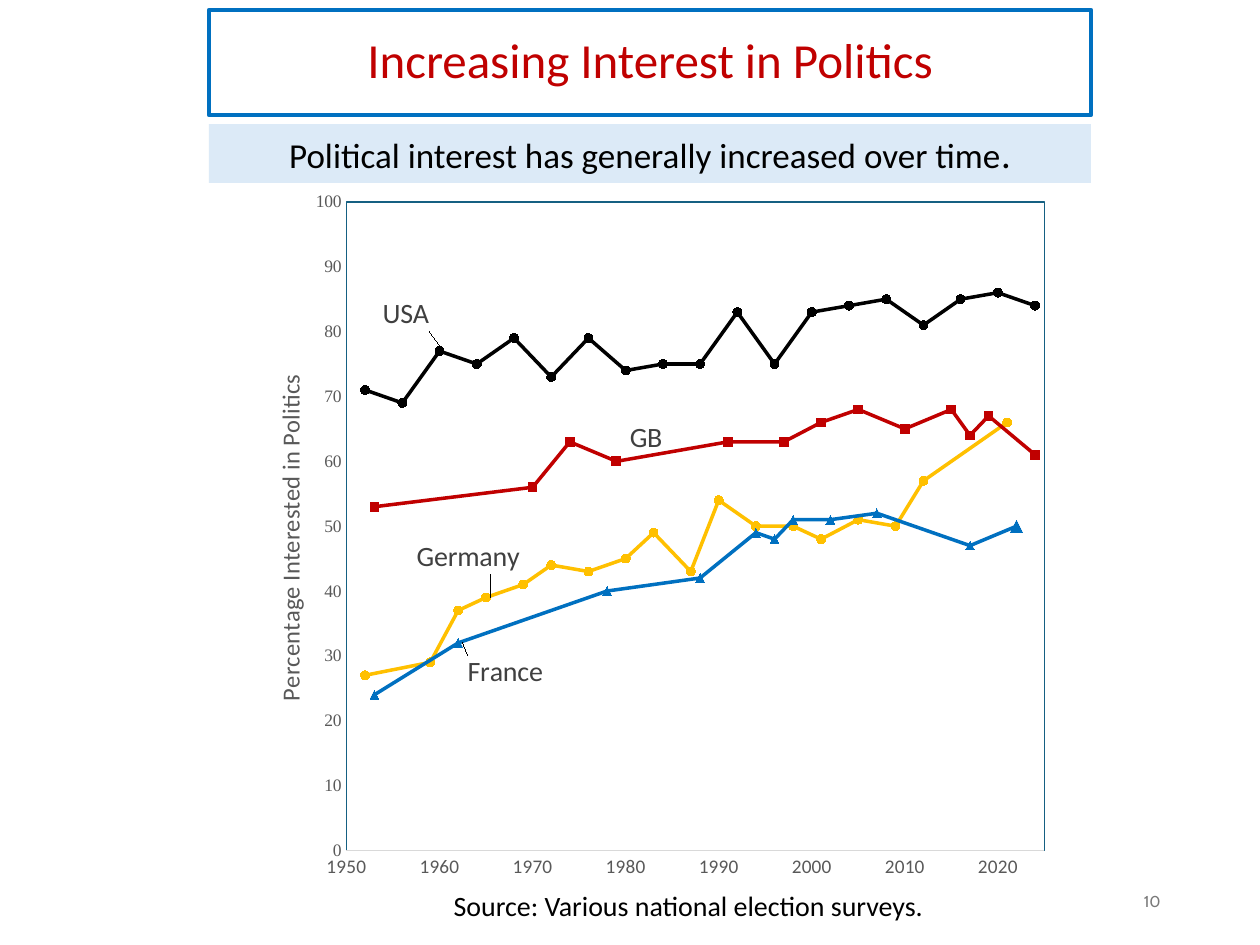
import pptx
import pptx.chart.data
import pptx.dml.color
import pptx.enum.chart
import pptx.enum.shapes
import pptx.enum.text
import pptx.oxml
import pptx.util

THEME = {
    "white": "FFFFFF", "black": "000000", "red": "C00000", "blue": "0070C0",
    "gold": "FFC000", "pale": "DCEAF7", "axis": "595959", "rule": "D9D9D9",
    "label": "404040", "frame": "156082", "number": "797979",
    "title": 28, "lead": 20, "stop": 22, "source": 16, "page": 9,
    "axis_title": 14, "years": 11, "percent": 10,
    "body": "Calibri", "serif": "Times New Roman", "sans": "Cabin",
}
for name, value in THEME.items():
    if name in ("white", "black", "red", "blue", "gold", "pale", "axis",
                "rule", "label", "frame", "number"):
        THEME[name] = pptx.dml.color.RGBColor.from_string(value)

PX = 914400 / 126
XL = pptx.enum.chart
ALIGN = pptx.enum.text.PP_ALIGN
NS = 'xmlns:c="http://schemas.openxmlformats.org/drawingml/2006/chart"'


def place(*lengths):
    return [pptx.util.Emu(round(n * PX)) for n in lengths]


def style(font, size, color, face="body"):
    font.size = pptx.util.Pt(THEME[size])
    font.color.rgb = THEME[color]
    font.name = THEME[face]
    font.bold = False


prs = pptx.Presentation()
prs.slide_width, prs.slide_height = place(1260, 945)
s = prs.slides.add_slide(prs.slide_layouts[5])
s.background.fill.solid()
s.background.fill.fore_color.rgb = THEME["white"]

title = s.shapes.title
title.left, title.top, title.width, title.height = place(209, 10, 882, 105)
title.line.color.rgb = THEME["blue"]
title.line.width = pptx.util.Pt(2.5)

lead = s.shapes.add_shape(pptx.enum.shapes.MSO_SHAPE.RECTANGLE, *place(209, 124, 882, 59))
lead.shadow.inherit = False
lead.fill.solid()
lead.fill.fore_color.rgb = THEME["pale"]
lead.line.fill.background()

data = pptx.chart.data.XyChartData()
SERIES = [
    ("USA", "black", "CIRCLE", 2, (-66, -37), range(1952, 2025, 4),
     [71, 69, 77, 75, 79, 73, 79, 74, 75, 75, 83, 75, 83, 84, 85, 81, 85, 86, 84]),
    ("GB", "red", "SQUARE", 3, (4, -23),
     [1953, 1970, 1974, 1979, 1991, 1997, 2001, 2005, 2010, 2015, 2017, 2019, 2024],
     [53, 56, 63, 60, 63, 63, 66, 68, 65, 68, 64, 67, 61]),
    ("France", "blue", "TRIANGLE", 1, (0, 29),
     [1953, 1962, 1978, 1988, 1994, 1996, 1998, 2002, 2007, 2017, 2022],
     [24, 32, 40, 42, 49, 48, 51, 51, 52, 47, 50]),
    ("Germany", "gold", "CIRCLE", 3, (-79, -40),
     [1952, 1959, 1962, 1965, 1969, 1972, 1976, 1980, 1983, 1987, 1990, 1994,
      1998, 2001, 2005, 2009, 2012, 2021],
     [27, 29, 37, 39, 41, 44, 43, 45, 49, 43, 54, 50, 50, 48, 51, 50, 57, 66]),
]
for country, color, marker, index, offset, years, shares in SERIES:
    points = data.add_series(country)
    for year, share in zip(years, shares):
        points.add_data_point(year, share)

CHART_W, CHART_H = 829, 712
chart = s.shapes.add_chart(XL.XL_CHART_TYPE.XY_SCATTER_LINES,
                           *place(252, 192, CHART_W, CHART_H), data).chart
chart.has_legend = False
chart.has_title = False
chart.plots[0].vary_by_categories = False
style(chart.font, "percent", "black", "sans")

for axis, low, high, size, face in [
    (chart.category_axis, 1950, 2025, "years", "body"),
    (chart.value_axis, 0, 100, "percent", "serif"),
]:
    axis.minimum_scale, axis.maximum_scale, axis.major_unit = low, high, 10
    axis.has_major_gridlines = False
    axis.major_tick_mark = axis.minor_tick_mark = XL.XL_TICK_MARK.NONE
    axis.tick_labels.number_format = "0"
    axis.tick_labels.number_format_is_linked = False
    style(axis.tick_labels.font, size, "axis", face)
chart.category_axis.format.line.color.rgb = THEME["rule"]
chart.category_axis.format.line.width = pptx.util.Pt(0.75)
chart.value_axis.format.line.fill.background()

axis_title = chart.value_axis.axis_title
r = axis_title.text_frame.paragraphs[0].add_run()
r.text = "Percentage Interested in Politics"
style(r.font, "axis_title", "axis")
axis_title.text_frame._txBody.bodyPr.set("rot", "-5400000")
axis_title.text_frame._txBody.bodyPr.set("vert", "horz")
for old in axis_title._element.xpath("c:layout"):
    axis_title._element.remove(old)
axis_title._element.xpath("c:tx")[0].addnext(pptx.oxml.parse_xml(
    f'<c:layout {NS}><c:manualLayout><c:xMode val="edge"/><c:yMode val="edge"/>'
    '<c:x val="0.02"/><c:y val="0.25"/></c:manualLayout></c:layout>'))

plot_area = chart._chartSpace.chart.plotArea
for old in plot_area.xpath("c:layout"):
    plot_area.remove(old)
plot_area.insert(0, pptx.oxml.parse_xml(
    f'<c:layout {NS}><c:manualLayout><c:layoutTarget val="inner"/>'
    '<c:xMode val="edge"/><c:yMode val="edge"/><c:x val="0.114"/><c:y val="0.014"/>'
    '<c:w val="0.842"/><c:h val="0.911"/></c:manualLayout></c:layout>'))
plot_area.append(pptx.oxml.parse_xml(
    f'<c:spPr {NS} xmlns:a="http://schemas.openxmlformats.org/drawingml/2006/main">'
    f'<a:noFill/><a:ln w="9525"><a:solidFill><a:srgbClr val="{THEME["frame"]}"/>'
    '</a:solidFill></a:ln></c:spPr>'))

for series, (country, color, marker, index, offset, years, shares) in zip(chart.plots[0].series, SERIES):
    series.smooth = False
    series.format.line.color.rgb = THEME[color]
    series.format.line.width = pptx.util.Pt(2)
    series.marker.style = XL.XL_MARKER_STYLE[marker]
    series.marker.size = 5
    series.marker.format.fill.solid()
    series.marker.format.fill.fore_color.rgb = THEME[color]
    series.marker.format.line.color.rgb = THEME[color]
    label = series.points[index].data_label
    r = label.text_frame.paragraphs[0].add_run()
    r.text = country
    style(r.font, "source", "label")
    label.position = XL.XL_LABEL_POSITION.RIGHT
    labels = series._element.xpath("c:dLbls")[0]
    labels.xpath("c:dLbl/c:idx")[0].addnext(pptx.oxml.parse_xml(
        f'<c:layout {NS}><c:manualLayout><c:x val="{offset[0] / CHART_W:.3f}"/>'
        f'<c:y val="{offset[1] / CHART_H:.3f}"/></c:manualLayout></c:layout>'))
    for flag in labels.xpath("c:showVal"):
        flag.set("val", "0")
    labels.append(pptx.oxml.parse_xml(
        f'<c:extLst {NS}><c:ext uri="{{CE6537A1-D6FC-4f65-9D91-7224C49458BB}}" '
        'xmlns:c15="http://schemas.microsoft.com/office/drawing/2012/chart">'
        '<c15:showLeaderLines val="1"/></c:ext></c:extLst>'))

latest = chart.plots[0].series[2].points[10]
latest.marker.style = XL.XL_MARKER_STYLE.TRIANGLE
latest.marker.size = 7
latest.marker.format.fill.solid()
latest.marker.format.fill.fore_color.rgb = THEME["blue"]
latest.marker.format.line.color.rgb = THEME["blue"]
latest.format.line.color.rgb = THEME["blue"]
latest.format.line.width = pptx.util.Pt(2)

page = s.shapes.add_textbox(*place(890, 876, 283, 50))
source = s.shapes.add_textbox(*place(347, 882, 683, 47))

for sp, align, runs in [
    (title, ALIGN.CENTER, [("Increasing Interest in Politics", "title", "red", "body")]),
    (lead, ALIGN.CENTER, [
        ("Political interest has generally increased over time", "lead", "black", "body"),
        (".", "stop", "black", "body")]),
    (page, ALIGN.RIGHT, [("10", "page", "number", "sans")]),
    (source, ALIGN.CENTER, [
        ("Source: Various national election surveys.", "source", "black", "body")]),
]:
    tf = sp.text_frame
    tf.word_wrap = True
    tf.auto_size = pptx.enum.text.MSO_AUTO_SIZE.NONE
    tf.vertical_anchor = pptx.enum.text.MSO_ANCHOR.MIDDLE
    p = tf.paragraphs[0]
    p.alignment = align
    for text, size, color, face in runs:
        r = p.add_run()
        r.text = text
        style(r.font, size, color, face)
title.text_frame.paragraphs[0].line_spacing = 0.9

prs.save("out.pptx")
